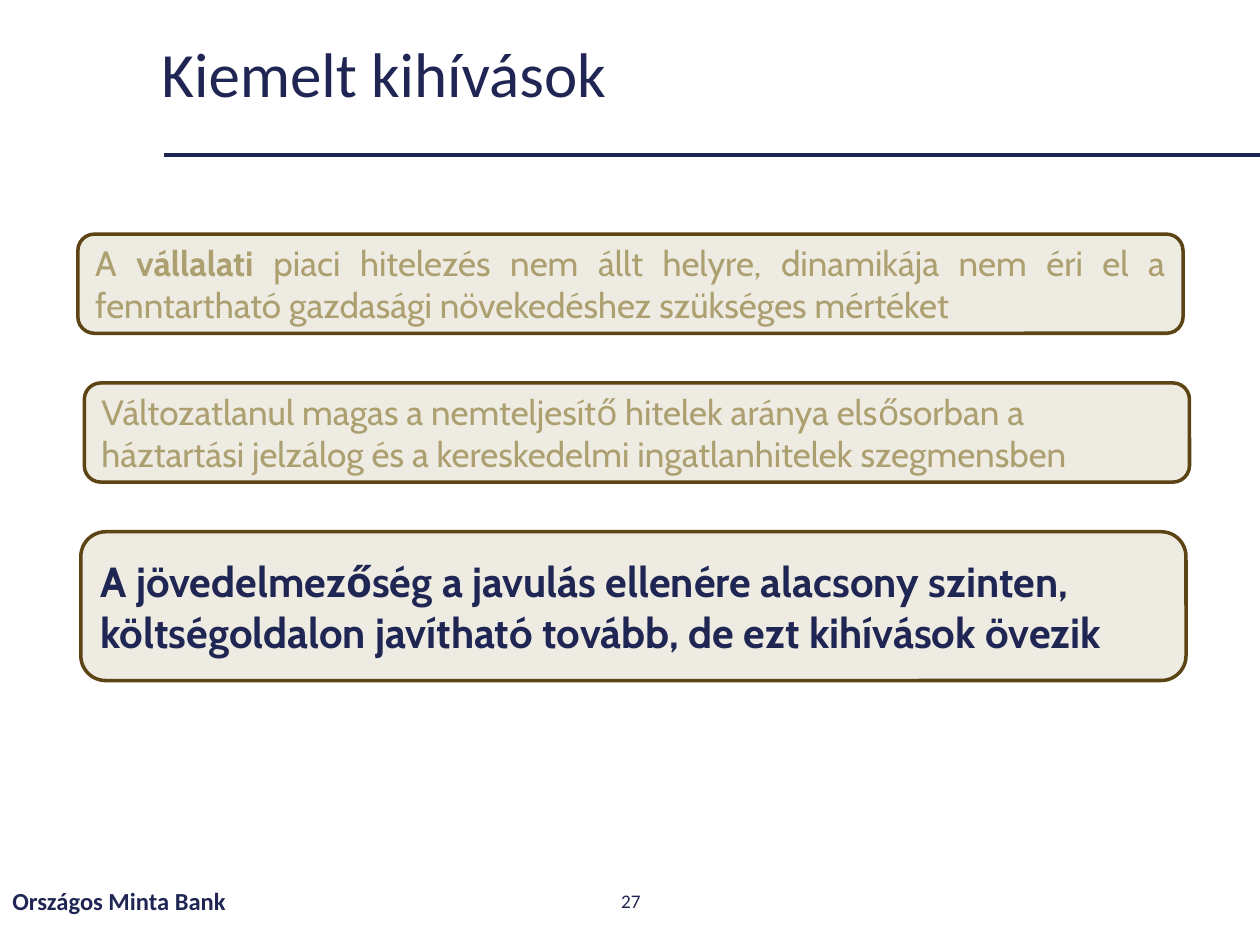
from lxml.etree import SubElement
from pptx import Presentation
from pptx.dml.color import RGBColor
from pptx.enum.shapes import MSO_CONNECTOR, MSO_SHAPE
from pptx.enum.text import MSO_ANCHOR, PP_ALIGN
from pptx.oxml.ns import qn
from pptx.util import Cm, Pt

NAVY, RULE, TAN, BROWN, CREAM = "202653", "1E2452", "AC9F70", "5D4415", "EEECE2"
TITLE = {"size": Pt(36), "name": "Calibri", "bold": False}
BANK = {"size": Pt(14), "name": "Calibri", "bold": True}
NUMBER = {"size": Pt(11), "name": "Calibri", "bold": False}
MUTED = {"size": Pt(20), "name": "Cabin", "bold": False}
MUTED_BOLD = {**MUTED, "bold": True}
STRONG = {"size": Pt(24), "name": "Cabin", "bold": True}

CHALLENGES = [
    (1.57, 2.0, PP_ALIGN.JUSTIFY, TAN, [
        ("A ", MUTED), ("vállalati ", MUTED_BOLD),
        ("piaci hitelezés nem állt helyre, dinamikája nem éri el a fenntartható "
         "gazdasági növekedéshez szükséges mértéket", MUTED)]),
    (1.7, 2.0, PP_ALIGN.LEFT, TAN, [
        ("Változatlanul magas a nemteljesítő hitelek aránya elsősorban a háztartási "
         "jelzálog és a kereskedelmi ingatlanhitelek szegmensben", MUTED)]),
    (1.63, 3.0, PP_ALIGN.LEFT, NAVY, [
        ("A jövedelmezőség a javulás ellenére alacsony szinten, költségoldalon "
         "javítható tovább, de ezt kihívások övezik", STRONG)]),
]
FOOTERS = [
    (0, 8.59, PP_ALIGN.LEFT, "Országos Minta Bank", BANK),
    (9.86, 5.72, PP_ALIGN.CENTER, "27", NUMBER),
]
BOX_TOP, BOX_WIDTH, BOX_GAP = 4.72, 22.28, 1.0


def rgb(value):
    """Turn a hex string into a colour."""
    return RGBColor.from_string(value)


def write(sp, runs, color, align=PP_ALIGN.LEFT):
    """Fill a shape with one paragraph of formatted runs."""
    tf = sp.text_frame
    tf.word_wrap = True
    tf.vertical_anchor = MSO_ANCHOR.MIDDLE
    p = tf.paragraphs[0]
    p.alignment = align
    for text, font in runs:
        r = p.add_run()
        r.text = text
        r.font.color.rgb = rgb(color)
        for key, value in font.items():
            setattr(r.font, key, value)
    return p


def add_rule(s):
    """Draw the line under the title."""
    line = s.shapes.add_connector(MSO_CONNECTOR.STRAIGHT, Cm(3.3), Cm(3.12), Cm(25.4), Cm(3.12))
    line.line.color.rgb = rgb(RULE)
    line.line.width = Pt(2.25)
    SubElement(line._element.spPr, qn("a:effectLst"))


def add_title(s):
    """Place and format the title."""
    sp = s.shapes.title
    sp.left, sp.top, sp.width, sp.height = Cm(3), Cm(0.5), Cm(20.7), Cm(2.1)
    write(sp, [("Kiemelt kihívások", TITLE)], NAVY).line_spacing = 0.9


def add_footers(s):
    """Add the bank name and the page number."""
    for left, width, align, text, font in FOOTERS:
        sp = s.shapes.add_textbox(Cm(left), Cm(17.65), Cm(width), Cm(1.02))
        write(sp, [(text, font)], NAVY, align)


def add_challenges(s):
    """Stack the challenge boxes with equal gaps."""
    top = BOX_TOP
    for left, height, align, color, runs in CHALLENGES:
        sp = s.shapes.add_shape(MSO_SHAPE.ROUNDED_RECTANGLE, Cm(left), Cm(top),
                                Cm(BOX_WIDTH), Cm(height))
        sp.shadow.inherit = False
        sp.fill.solid()
        sp.fill.fore_color.rgb = rgb(CREAM)
        sp.line.color.rgb = rgb(BROWN)
        sp.line.width = Pt(2)
        write(sp, runs, color, align)
        top += height + BOX_GAP


def main():
    """Build the slide and save it."""
    prs = Presentation()
    prs.slide_width, prs.slide_height = Cm(25.4), Cm(19.05)
    s = prs.slides.add_slide(prs.slide_layouts[5])
    add_rule(s)
    add_title(s)
    add_footers(s)
    add_challenges(s)
    prs.save("out.pptx")


if __name__ == "__main__":
    main()
